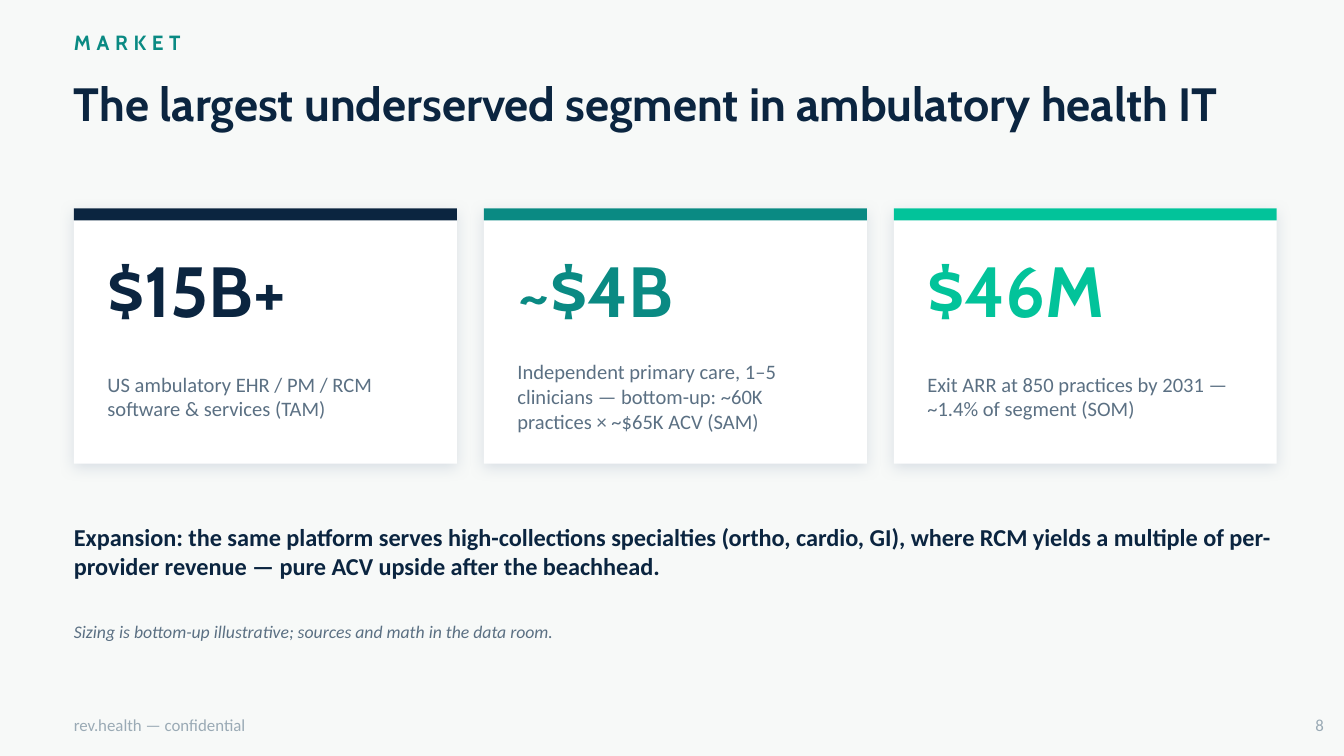
"""Build the market sizing slide."""
from pptx import Presentation
from pptx.dml.color import RGBColor
from pptx.enum.shapes import MSO_SHAPE as Shape
from pptx.enum.text import MSO_ANCHOR as Anchor, MSO_AUTO_SIZE as Fit, PP_ALIGN as Align
from pptx.oxml import parse_xml
from pptx.oxml.ns import nsdecls
from pptx.util import Inches, Pt

NAVY = RGBColor(0x0B, 0x25, 0x40)
TEAL = RGBColor(0x0A, 0x8A, 0x83)
MINT = RGBColor(0x02, 0xC3, 0x9A)
SLATE = RGBColor(0x5B, 0x70, 0x83)
GREY = RGBColor(0x9A, 0xAA, 0xB5)
WHITE = RGBColor(0xFF, 0xFF, 0xFF)
PAPER = RGBColor(0xF7, 0xF9, 0xF8)
HEAD, BODY = "Cabin", "Calibri"

TITLE = "The largest underserved segment in ambulatory health IT"
CARDS = [
    ("$15B+", "US ambulatory EHR / PM / RCM software & services (TAM)", NAVY),
    ("~$4B", "Independent primary care, 1–5 clinicians — bottom-up: "
     "~60K practices × ~$65K ACV (SAM)", TEAL),
    ("$46M", "Exit ARR at 850 practices by 2031 — ~1.4% of segment (SOM)", MINT),
]
GROWTH = ("Expansion: the same platform serves high-collections specialties "
          "(ortho, cardio, GI), where RCM yields a multiple of per-provider "
          "revenue — pure ACV upside after the beachhead.")
NOTE = "Sizing is bottom-up illustrative; sources and math in the data room."
FOOTER, PAGE = "rev.health — confidential", "8"

LEFT, TOP = 0.55, 1.55
CARD_W, CARD_H, GAP = 2.85, 1.9, 0.2
BAR_H, PAD, TEXT_W = 0.09, 0.25, 2.4
FOOT_Y, FOOT_H = 5.27, 0.25


def write(box, text, size, color, face=BODY, bold=False, italic=False,
          anchor=Anchor.MIDDLE, align=Align.LEFT):
    frame = box.text_frame
    frame.text = text
    frame.word_wrap = True
    frame.auto_size = Fit.NONE
    frame.vertical_anchor = anchor
    frame.margin_left = frame.margin_right = 0
    frame.margin_top = frame.margin_bottom = 0
    line = frame.paragraphs[0]
    line.alignment = align
    run = line.runs[0]
    font = run.font
    font.name, font.size = face, Pt(size)
    font.bold, font.italic = bold, italic
    font.color.rgb = color
    return run


def add_text(slide, area, *args, **style):
    box = slide.shapes.add_textbox(*map(Inches, area))
    return write(box, *args, **style)


def add_rect(slide, area, color):
    rect = slide.shapes.add_shape(Shape.RECTANGLE, *map(Inches, area))
    rect.shadow.inherit = False
    rect.fill.solid()
    rect.fill.fore_color.rgb = color
    rect.line.fill.background()
    return rect


def add_shade(rect):
    props = rect._element.spPr
    props.remove(props.find("{*}effectLst"))
    props.append(parse_xml(
        f'<a:effectLst {nsdecls("a")}>'
        f'<a:outerShdw blurRad="{Pt(8)}" dist="{Pt(2)}" dir="5400000" '
        'algn="bl" rotWithShape="0"><a:srgbClr val="94A3B8">'
        '<a:alpha val="30000"/></a:srgbClr></a:outerShdw></a:effectLst>'))


def add_card(slide, left, value, label, color):
    add_shade(add_rect(slide, (left, TOP, CARD_W, CARD_H), WHITE))
    add_rect(slide, (left, TOP, CARD_W, BAR_H), color)
    inner = left + PAD
    add_text(slide, (inner, TOP + PAD, TEXT_W, 0.7), value, 38, color, HEAD, bold=True)
    add_text(slide, (inner, TOP + 1, TEXT_W, 0.8), label, 11, SLATE)


def main():
    deck = Presentation()
    deck.slide_width = Inches(10)
    deck.slide_height = deck.slide_width * 9 // 16
    slide = deck.slides.add_slide(deck.slide_layouts[5])
    slide.background.fill.solid()
    slide.background.fill.fore_color.rgb = PAPER

    title = slide.shapes.title
    title.left, title.top, title.width, title.height = map(Inches, (LEFT, 0.56, 9, 0.8))
    write(title, TITLE, 25, NAVY, HEAD, bold=True, anchor=Anchor.TOP)
    tag = add_text(slide, (LEFT, 0.22, 9, 0.28), "MARKET", 11, TEAL, HEAD,
                   bold=True, anchor=Anchor.TOP)
    tag._r.get_or_add_rPr().set("spc", "300")

    for i, card in enumerate(CARDS):
        add_card(slide, LEFT + i * (CARD_W + GAP), *card)

    add_text(slide, (LEFT, 3.8, 8.9, 0.6), GROWTH, 13, NAVY, bold=True)
    add_text(slide, (LEFT, 4.55, 8.9, 0.3), NOTE, 9.5, SLATE, italic=True)
    add_text(slide, (9.45, FOOT_Y, 0.4, FOOT_H), PAGE, 9, GREY, align=Align.RIGHT)
    add_text(slide, (LEFT, FOOT_Y, 3, FOOT_H), FOOTER, 9, GREY)
    deck.save("out.pptx")


if __name__ == "__main__":
    main()
